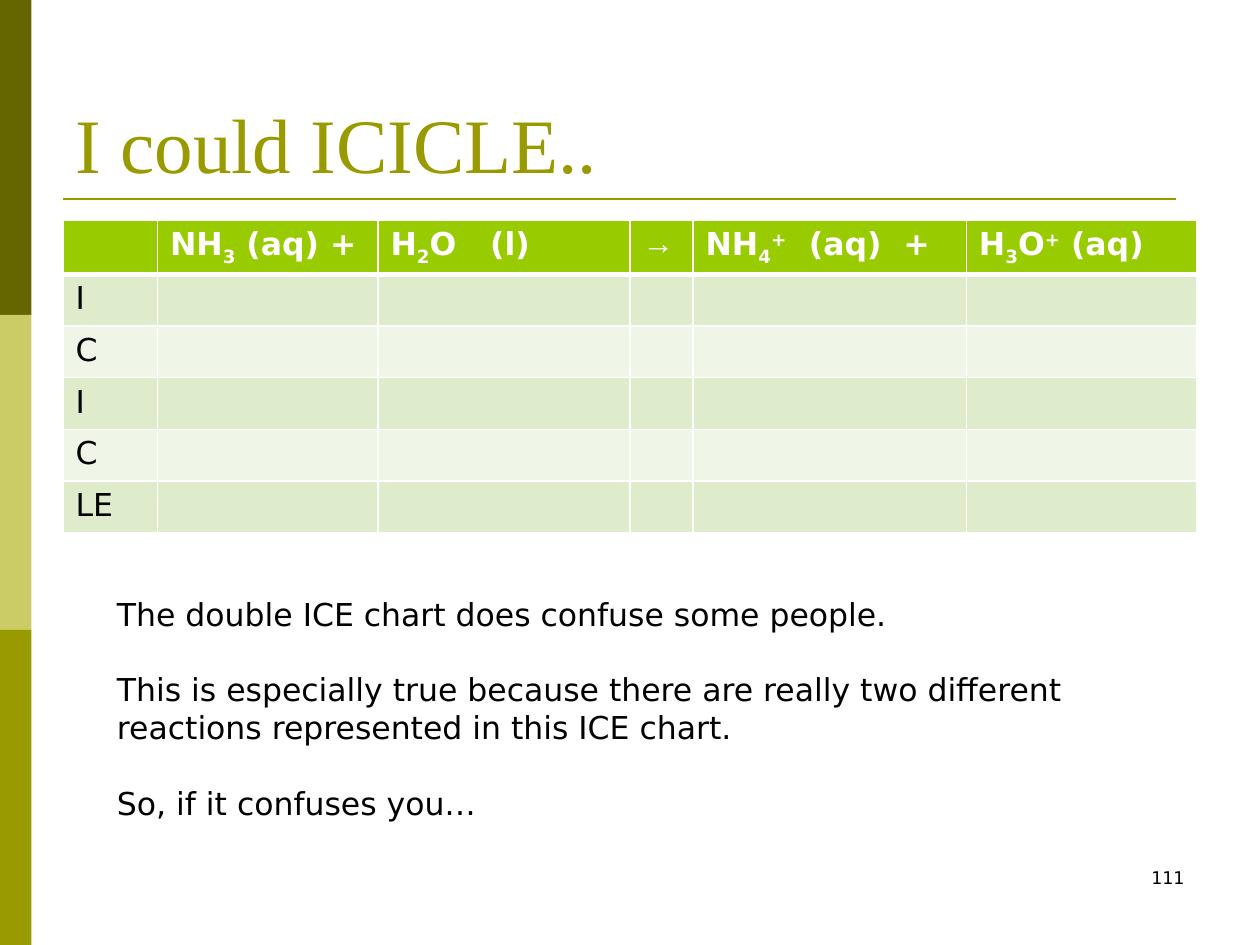
from dataclasses import dataclass

from lxml.etree import SubElement
from pptx import Presentation
from pptx.dml.color import RGBColor as RGB
from pptx.enum.shapes import MSO_CONNECTOR as CONN, MSO_SHAPE as SHAPE
from pptx.enum.text import MSO_ANCHOR as ANCHOR, PP_ALIGN as ALIGN
from pptx.oxml.ns import qn
from pptx.util import Inches, Pt


@dataclass(frozen=True)
class Theme:
    dark: str = "666600"
    light: str = "CCCC66"
    olive: str = "999900"
    header: str = "99CC00"
    bands: tuple = ("DEECCC", "EFF6E7")
    white: str = "FFFFFF"
    black: str = "000000"
    serif: str = "Times New Roman"
    sans: str = "DejaVu Sans"
    title_pt: int = 44
    body_pt: int = 18
    number_pt: int = 10


T = Theme()
SUB, SUP = -25, 30

TITLE = "I could ICICLE.."
SPECIES = [
    [],
    [("NH", 0), ("3", SUB), (" (aq) +", 0)],
    [("H", 0), ("2", SUB), ("O\t(l)", 0)],
    [("→", 0)],
    [("NH", 0), ("4", SUB), ("+", SUP), ("\t(aq)\t+", 0)],
    [("H", 0), ("3", SUB), ("O", 0), ("+", SUP), (" (aq)", 0)],
]
TABS = {2: [0.79], 4: [0.82, 1.57]}
STEPS = ["I", "C", "I", "C", "LE"]
COL_WIDTHS = [0.75, 1.75, 2, 0.5, 2.17, 1.83]
ROW_HEIGHT = 0.41
NOTES = [
    "The double ICE chart does confuse some people.",
    "This is especially true because there are really two different "
    "reactions represented in this ICE chart.",
    "So, if it confuses you…",
]
NUMBER = "111"


def box(x, y, w, h):
    return [Inches(v) for v in (x, y, w, h)]


def add_run(p, text, size, color=T.black, font=T.sans, bold=False, base=0):
    r = p.add_run()
    r.text = text
    f = r.font
    f.name, f.size, f.bold = font, Pt(size), bold
    f.color.rgb = RGB.from_string(color)
    if base:
        r._r.get_or_add_rPr().set("baseline", str(base * 1000))


def add_tabs(p, stops):
    tabs = SubElement(p._p.get_or_add_pPr(), qn("a:tabLst"))
    for stop in stops:
        SubElement(tabs, qn("a:tab"), pos=str(Inches(stop)), algn="l")


def style_cell(cell, fill, bottom=1):
    pr = cell._tc.get_or_add_tcPr()
    for side, width in (("L", 1), ("R", 1), ("T", 1), ("B", bottom)):
        ln = SubElement(pr, qn(f"a:ln{side}"), w=str(Pt(width)))
        SubElement(SubElement(ln, qn("a:solidFill")), qn("a:srgbClr"), val=T.white)
    cell.fill.solid()
    cell.fill.fore_color.rgb = RGB.from_string(fill)


def add_sidebar(s):
    for i, color in enumerate((T.dark, T.light, T.olive)):
        sp = s.shapes.add_shape(SHAPE.RECTANGLE, *box(0, 2.5 * i, 0.25, 2.5))
        sp.shadow.inherit = False
        sp.fill.solid()
        sp.fill.fore_color.rgb = RGB.from_string(color)
        sp.line.fill.background()


def add_title(s):
    title = s.shapes.title
    title.left, title.top, title.width, title.height = box(0.5, 0.3, 9, 1.25)
    tf = title.text_frame
    tf.vertical_anchor = ANCHOR.BOTTOM
    p = tf.paragraphs[0]
    p.alignment = ALIGN.LEFT
    add_run(p, TITLE, T.title_pt, T.olive, T.serif)
    rule = s.shapes.add_connector(CONN.STRAIGHT, *box(0.5, 1.58, 9.33, 1.58))
    rule.line.color.rgb = RGB.from_string(T.olive)
    rule.line.width = Pt(1.5)
    SubElement(rule._element.spPr, qn("a:effectLst"))


def add_ice_table(s):
    rows, cols = len(STEPS) + 1, len(COL_WIDTHS)
    frame = s.shapes.add_table(
        rows, cols, *box(0.5, 1.75, sum(COL_WIDTHS), rows * ROW_HEIGHT))
    table = frame.table
    for col, width in zip(table.columns, COL_WIDTHS):
        col.width = Inches(width)
    for row in table.rows:
        row.height = Inches(ROW_HEIGHT)
    for c, parts in enumerate(SPECIES):
        cell = table.cell(0, c)
        style_cell(cell, T.header, bottom=3)
        p = cell.text_frame.paragraphs[0]
        if c in TABS:
            add_tabs(p, TABS[c])
        for text, base in parts:
            font = T.serif if text == "→" else T.sans
            add_run(p, text, T.body_pt, T.white, font, True, base)
    for i, step in enumerate(STEPS):
        for c in range(cols):
            style_cell(table.cell(i + 1, c), T.bands[i % 2])
        add_run(table.cell(i + 1, 0).text_frame.paragraphs[0], step, T.body_pt)


def add_text(s, area, lines, size, align=ALIGN.LEFT, gap=0):
    tf = s.shapes.add_textbox(*box(*area)).text_frame
    tf.word_wrap = True
    for i, line in enumerate(lines):
        p = tf.add_paragraph() if i else tf.paragraphs[0]
        p.alignment = align
        p.space_before = Pt(gap if i else 0)
        add_run(p, line, size)


def main():
    prs = Presentation()
    prs.slide_width, prs.slide_height = Inches(10), Inches(7.5)
    s = prs.slides.add_slide(prs.slide_layouts[5])
    add_sidebar(s)
    add_title(s)
    add_ice_table(s)
    add_text(s, (7.17, 6.83, 2.33, 0.5), [NUMBER], T.number_pt, ALIGN.RIGHT)
    add_text(s, (0.83, 4.67, 7.92, 1.92), NOTES, T.body_pt, gap=21.6)
    prs.save("out.pptx")


if __name__ == "__main__":
    main()
